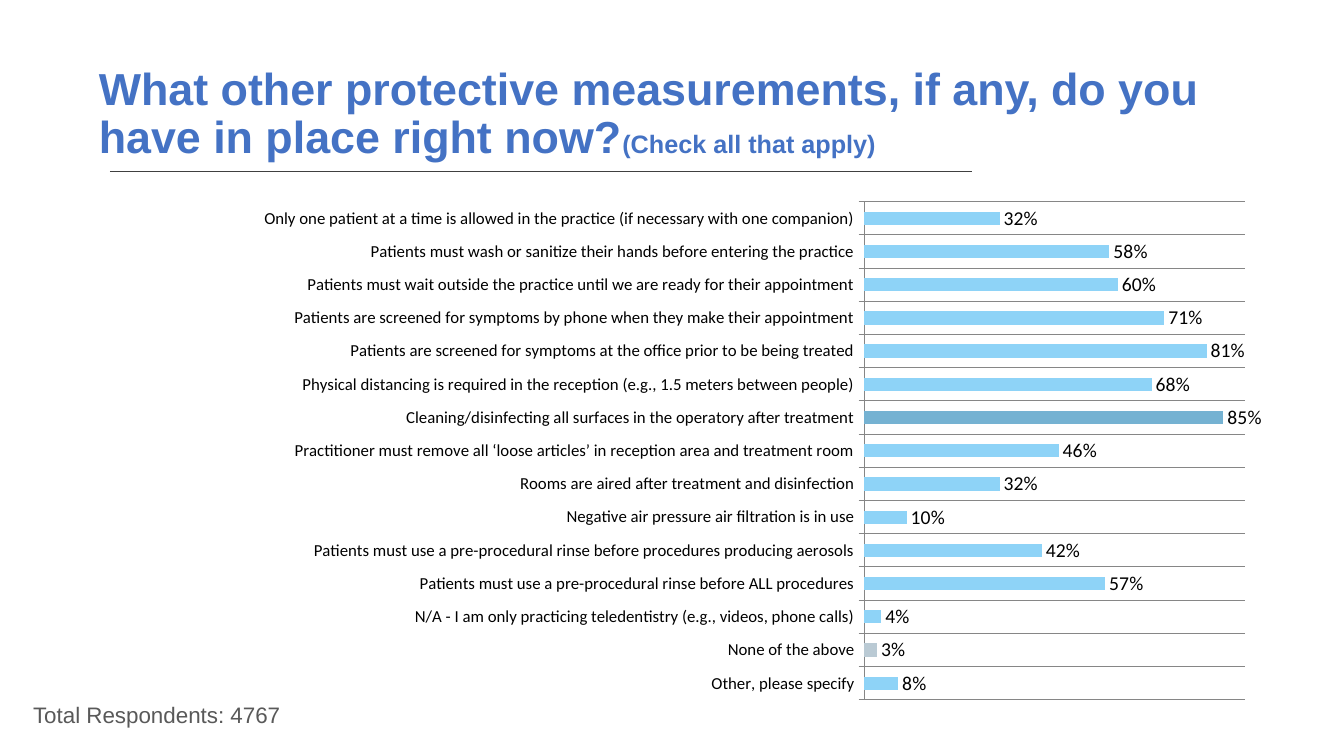
import dataclasses
import typing

import lxml.etree
import pptx
import pptx.chart.data
import pptx.dml.color
import pptx.enum.chart
import pptx.enum.shapes
import pptx.enum.text
import pptx.oxml
import pptx.oxml.ns
import pptx.util

PX = 9144  # EMU in one px, 100 px to the inch


@dataclasses.dataclass(frozen=True)
class Theme:
    title: str = "4472C4"
    note: str = "595959"
    rule: str = "404040"
    grid: str = "868686"
    text: str = "000000"
    bar: str = "8ED3F7"
    top: str = "75B2D2"
    none: str = "BACAD4"
    head: str = "Arial"
    body: str = "Calibri"
    big: int = 32
    sub: int = 18
    foot: int = 16
    value: int = 14
    label: int = 12


LOOK = Theme()


@dataclasses.dataclass(frozen=True)
class Bar:
    label: str
    share: float
    tint: str = LOOK.bar


BARS = [
    Bar("Only one patient at a time is allowed in the practice (if necessary with one companion)", 0.32),
    Bar("Patients must wash or sanitize their hands before entering the practice", 0.58),
    Bar("Patients must wait outside the practice until we are ready for their appointment", 0.60),
    Bar("Patients are screened for symptoms by phone when they make their appointment", 0.71),
    Bar("Patients are screened for symptoms at the office prior to be being treated", 0.81),
    Bar("Physical distancing is required in the reception (e.g., 1.5 meters between people)", 0.68),
    Bar("Cleaning/disinfecting all surfaces in the operatory after treatment", 0.85, LOOK.top),
    Bar("Practitioner must remove all ‘loose articles’ in reception area and treatment room", 0.46),
    Bar("Rooms are aired after treatment and disinfection", 0.32),
    Bar("Negative air pressure air filtration is in use", 0.10),
    Bar("Patients must use a pre-procedural rinse before procedures producing aerosols", 0.42),
    Bar("Patients must use a pre-procedural rinse before ALL procedures", 0.57),
    Bar("N/A - I am only practicing teledentistry (e.g., videos, phone calls)", 0.04),
    Bar("None of the above", 0.03, LOOK.none),
    Bar("Other, please specify", 0.08),
]


def px(*sizes: int) -> list[int]:
    return [size * PX for size in sizes]


def rgb(code: str) -> pptx.dml.color.RGBColor:
    return pptx.dml.color.RGBColor.from_string(code)


def assign(item: typing.Any, values: dict[str, typing.Any]) -> None:
    for name, value in values.items():
        setattr(item, name, value)


def style(font: typing.Any, face: str, size: int, color: str, bold: bool = False) -> None:
    assign(font, {"name": face, "size": pptx.util.Pt(size), "bold": bold})
    font.color.rgb = rgb(color)


def stroke(line: typing.Any, color: str, width: float) -> None:
    line.color.rgb = rgb(color)
    line.width = pptx.util.Pt(width)


def write(shape: typing.Any, runs: list[tuple[str, int]], color: str, bold: bool, anchor: typing.Any) -> None:
    frame = shape.text_frame
    assign(frame, {"word_wrap": True, "vertical_anchor": anchor,
                   "auto_size": pptx.enum.text.MSO_AUTO_SIZE.NONE})
    para = frame.paragraphs[0]
    assign(para, {"line_spacing": 0.9, "alignment": pptx.enum.text.PP_ALIGN.LEFT})
    for text, size in runs:
        run = para.add_run()
        run.text = text
        style(run.font, LOOK.head, size, color, bold)


def add_rule(slide: typing.Any) -> None:
    rule = slide.shapes.add_connector(
        pptx.enum.shapes.MSO_CONNECTOR.STRAIGHT, *px(109, 170, 964, 170))
    stroke(rule.line, LOOK.rule, 0.5)
    lxml.etree.SubElement(rule._element.spPr, pptx.oxml.ns.qn("a:effectLst"))


def set_plot(chart: typing.Any, **box: float) -> None:
    modes = '<c:layoutTarget val="inner"/><c:xMode val="edge"/><c:yMode val="edge"/>'
    sizes = "".join(f'<c:{key} val="{val}"/>' for key, val in box.items())
    space = pptx.oxml.ns.nsdecls("c")
    layout = pptx.oxml.parse_xml(
        f"<c:layout {space}><c:manualLayout>{modes}{sizes}</c:manualLayout></c:layout>")
    area = chart._chartSpace.chart.plotArea
    for old in area.findall(pptx.oxml.ns.qn("c:layout")):
        area.remove(old)
    area.insert(0, layout)


def add_bars(slide: typing.Any, bars: list[Bar]) -> None:
    data = pptx.chart.data.CategoryChartData(number_format="0%")
    data.categories = [bar.label for bar in bars]
    data.add_series("Series 1", [bar.share for bar in bars])
    chart = slide.shapes.add_chart(
        pptx.enum.chart.XL_CHART_TYPE.BAR_CLUSTERED, *px(17, 182, 1236, 531), data).chart
    assign(chart, {"has_legend": False, "has_title": False})
    style(chart.font, LOOK.body, LOOK.sub, LOOK.text)
    set_plot(chart, x=0.68, y=0.034, w=0.305, h=0.931)

    # Axes
    names = chart.category_axis
    assign(names, {"reverse_order": True, "has_major_gridlines": True,
                   "major_tick_mark": pptx.enum.chart.XL_TICK_MARK.OUTSIDE})
    style(names.tick_labels.font, LOOK.body, LOOK.label, LOOK.text)
    for line in (names.format.line, names.major_gridlines.format.line):
        stroke(line, LOOK.grid, 0.75)
    assign(chart.value_axis, {"visible": False, "has_major_gridlines": False,
                              "minimum_scale": 0, "maximum_scale": 0.9})

    # Bars and their labels
    plot = chart.plots[0]
    assign(plot, {"gap_width": 150, "vary_by_categories": False, "has_data_labels": True})
    assign(plot.data_labels, {"show_value": True, "number_format": "0%",
                              "number_format_is_linked": False,
                              "position": pptx.enum.chart.XL_LABEL_POSITION.OUTSIDE_END})
    style(plot.data_labels.font, LOOK.body, LOOK.value, LOOK.text)
    series = plot.series[0]
    series.format.fill.solid()
    series.format.fill.fore_color.rgb = rgb(LOOK.bar)
    for spot, bar in enumerate(bars):
        if bar.tint != LOOK.bar:
            fill = series.points[spot].format.fill
            fill.solid()
            fill.fore_color.rgb = rgb(bar.tint)


def main() -> None:
    deck = pptx.Presentation()
    assign(deck, dict(zip(("slide_width", "slide_height"), px(1333, 750))))
    slide = deck.slides.add_slide(deck.slide_layouts[5])

    # Title and the rule under it
    title = slide.shapes.title
    assign(title, dict(zip(("left", "top", "width", "height"), px(88, 85, 1200, 58))))
    write(title, [("What other protective measurements, if any, do you have in place right now?", LOOK.big),
                  ("(Check all that apply)", LOOK.sub)],
          LOOK.title, True, pptx.enum.text.MSO_ANCHOR.MIDDLE)
    add_rule(slide)

    # Chart and respondent count
    add_bars(slide, BARS)
    note = slide.shapes.add_textbox(*px(23, 694, 1194, 42))
    write(note, [("Total Respondents: 4767", LOOK.foot)],
          LOOK.note, False, pptx.enum.text.MSO_ANCHOR.TOP)

    deck.save("out.pptx")


if __name__ == "__main__":
    main()
